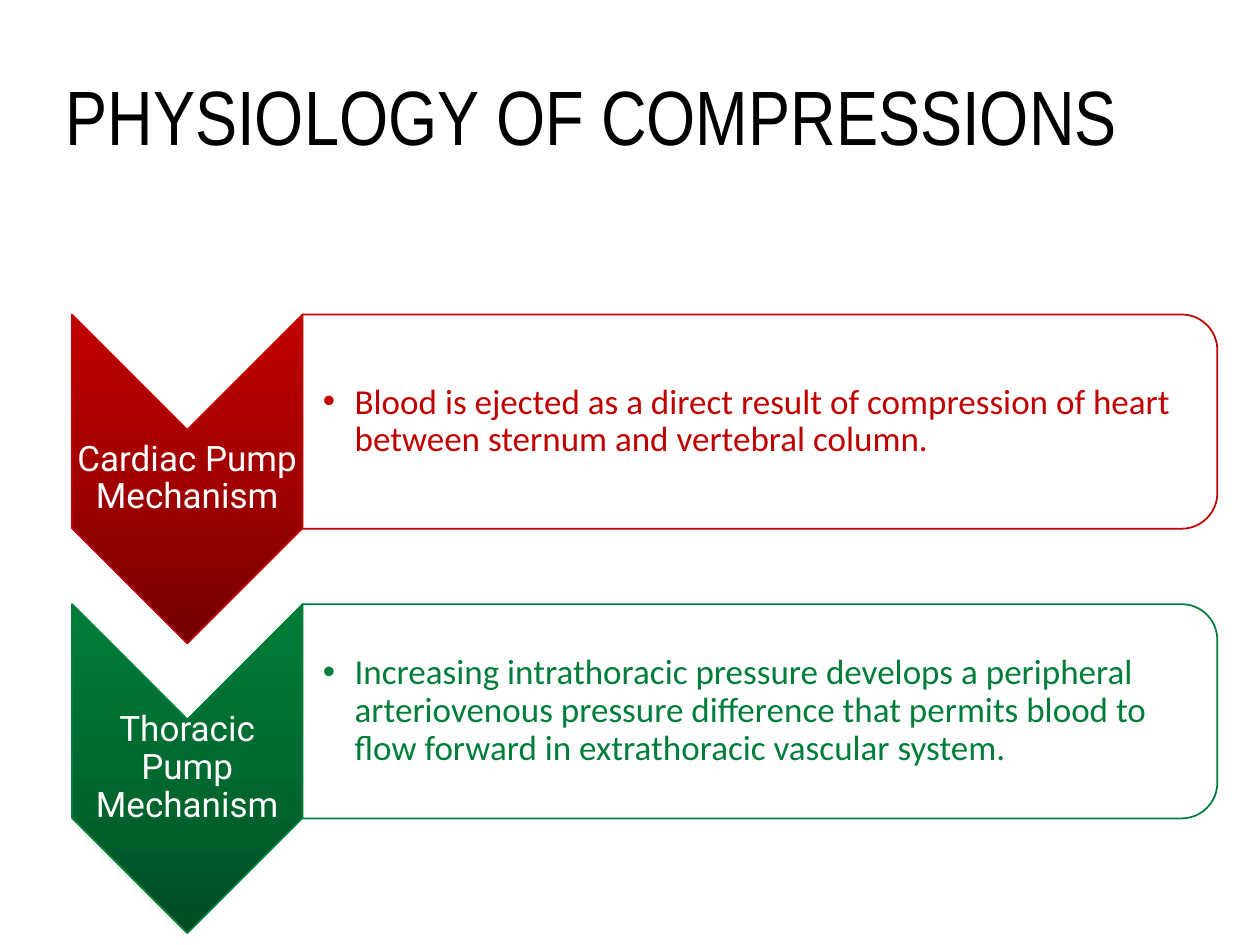
from copy import deepcopy

from lxml import etree
from pptx import Presentation
from pptx.dml.color import RGBColor
from pptx.enum.shapes import MSO_SHAPE
from pptx.enum.text import MSO_ANCHOR, MSO_AUTO_SIZE, PP_ALIGN
from pptx.oxml.ns import qn
from pptx.util import Cm, Pt

CHEVRON, PANEL = MSO_SHAPE.CHEVRON, MSO_SHAPE.ROUND_2_SAME_RECTANGLE
MIDDLE, NO_FIT = MSO_ANCHOR.MIDDLE, MSO_AUTO_SIZE.NONE
LEFT, CENTER = PP_ALIGN.LEFT, PP_ALIGN.CENTER

# Content
TITLE = "PHYSIOLOGY OF COMPRESSIONS"
MECHANISMS = [
    {"name": "Cardiac Pump Mechanism",
     "detail": "Blood is ejected as a direct result of compression of heart "
               "between sternum and vertebral column.",
     "shades": ("720000", "A20000", "C00000")},
    {"name": "Thoracic Pump Mechanism",
     "detail": "Increasing intrathoracic pressure develops a peripheral "
               "arteriovenous pressure difference that permits blood to flow "
               "forward in extrathoracic vascular system.",
     "shades": ("004B22", "006A30", "007E39")},
]

# Theme
THEME = {
    "title": {"name": "Arial Narrow", "size": Pt(44)},
    "label": {"name": "Roboto", "size": Pt(20)},
    "detail": {"name": "Calibri", "size": Pt(20)},
    "black": "000000",
    "white": "FFFFFF",
    "outline": Pt(1),
    "line_spacing": 0.9,
    "panel_opacity": 90,
}

# Layout in centimetres
ROW_TOP, ROW_PITCH = 6.34, 5.84
CHEVRON_LEFT, CHEVRON_W, CHEVRON_H = 1.45, 4.65, 6.63
PANEL_LEFT, PANEL_W, PANEL_H = CHEVRON_LEFT + CHEVRON_W, 18.44, 4.32
LABEL_DROP, LABEL_H = 2.32, 1.98
DETAIL_W, DETAIL_H = 18.24, 3.89
INSET, DETAIL_INSET, BULLET_INDENT = 0.03, 0.41, 0.64


def place(shape, left, top, width, height):
    box = {"left": left, "top": top, "width": width, "height": height}
    for side, length in box.items():
        setattr(shape, side, Cm(length))


def write(shape, text, style, color, align, **insets):
    frame = shape.text_frame
    frame_format = {"word_wrap": True, "auto_size": NO_FIT, "vertical_anchor": MIDDLE}
    for key, value in (frame_format | insets).items():
        setattr(frame, key, value)
    paragraph = frame.paragraphs[0]
    paragraph_format = {"text": text, "alignment": align, "space_before": Pt(0),
                        "line_spacing": THEME["line_spacing"]}
    for key, value in paragraph_format.items():
        setattr(paragraph, key, value)
    font = paragraph.runs[0].font
    for key, value in THEME[style].items():
        setattr(font, key, value)
    font.color.rgb = RGBColor.from_string(color)
    return paragraph


def insets(left):
    sides = {f"margin_{side}": Cm(INSET) for side in ("top", "right", "bottom")}
    return sides | {"margin_left": Cm(left)}


def add_turned(shapes, kind, left, top, width, height, line_color):
    """Add a shape turned by 90 degrees that covers the given box."""
    shape = shapes.add_shape(kind, 0, 0, 0, 0)
    shift = (width - height) / 2
    place(shape, left + shift, top - shift, height, width)
    shape.rotation = 90
    shape.shadow.inherit = False
    shape.line.color.rgb = RGBColor.from_string(line_color)
    shape.line.width = THEME["outline"]
    return shape


def fill_gradient(shape, shades):
    shape.fill.gradient()
    shape.fill.gradient_angle = 90
    gradient = shape._element.spPr.find(qn("a:gradFill"))
    gradient.set("rotWithShape", "0")
    stop_list = gradient.find(qn("a:gsLst"))
    stop_list.append(deepcopy(stop_list[-1]))
    for index, (stop, shade) in enumerate(zip(shape.fill.gradient_stops, shades)):
        stop.position = index / (len(shades) - 1)
        stop.color.rgb = RGBColor.from_string(shade)


def fill_translucent(shape, color, opacity):
    shape.fill.solid()
    shape.fill.fore_color.rgb = RGBColor.from_string(color)
    solid = shape._element.spPr.find(qn("a:solidFill"))
    etree.SubElement(solid[0], qn("a:alpha")).set("val", str(opacity * 1000))


def add_mechanism(shapes, mechanism, detail, top):
    accent = mechanism["shades"][-1]

    # Chevron and its label
    chevron = add_turned(shapes, CHEVRON, CHEVRON_LEFT, top, CHEVRON_W, CHEVRON_H, accent)
    fill_gradient(chevron, mechanism["shades"])
    label = shapes.add_textbox(0, 0, 0, 0)
    place(label, CHEVRON_LEFT, top + LABEL_DROP, CHEVRON_W, LABEL_H)
    write(label, mechanism["name"], "label", THEME["white"], CENTER, **insets(INSET))

    # Panel with the bulleted detail in front of it
    panel = add_turned(shapes, PANEL, PANEL_LEFT, top, PANEL_W, PANEL_H, accent)
    fill_translucent(panel, THEME["white"], THEME["panel_opacity"])
    panel._element.addnext(detail._element)
    place(detail, PANEL_LEFT, top + (PANEL_H - DETAIL_H) / 2, DETAIL_W, DETAIL_H)
    paragraph = write(detail, mechanism["detail"], "detail", accent, LEFT,
                      **insets(DETAIL_INSET))
    properties = paragraph._p.get_or_add_pPr()
    properties.set("marL", str(Cm(BULLET_INDENT)))
    properties.set("indent", str(-Cm(BULLET_INDENT)))


def main():
    deck = Presentation()
    deck.slide_width, deck.slide_height = Cm(25.4), Cm(19.05)
    slide = deck.slides.add_slide(deck.slide_layouts.get_by_name("Two Content"))
    title, *details = list(slide.placeholders)[:3]

    place(title, 1.07, 0.84, 25.4, 3.2)
    write(title, TITLE, "title", THEME["black"], LEFT)

    for row, (mechanism, detail) in enumerate(zip(MECHANISMS, details)):
        add_mechanism(slide.shapes, mechanism, detail, ROW_TOP + row * ROW_PITCH)

    deck.save("out.pptx")


if __name__ == "__main__":
    main()
